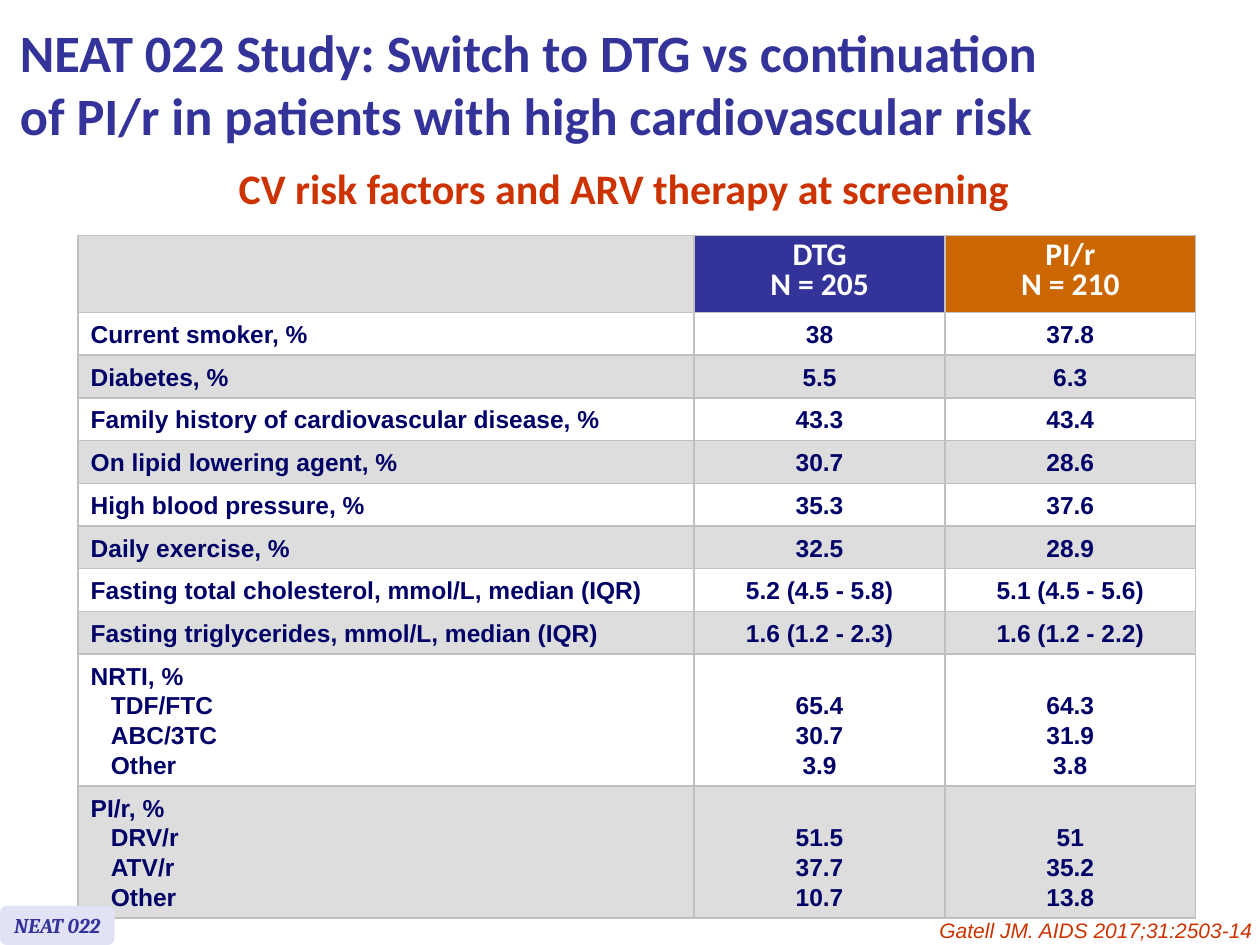
from dataclasses import dataclass

from lxml import etree
from pptx import Presentation
from pptx import util as u
from pptx.dml.color import RGBColor
from pptx.enum import shapes, text
from pptx.oxml.ns import qn

WIDE, HIGH = u.Inches(10), u.Inches(7.5)
COLS, ROWS = 100, 75  # slide grid
HUES = {
    "blue": "333399", "navy": "000066", "red": "CC3300", "orange": "CC6600",
    "gray": "DDDDDD", "line": "C0C0C0", "lilac": "E2E2F6", "white": "FFFFFF",
}
LEFT, MID, RIGHT = text.PP_ALIGN.LEFT, text.PP_ALIGN.CENTER, text.PP_ALIGN.RIGHT
LEAD = u.Pt(17)
INDENT = 1.6


@dataclass(frozen=True)
class Box:
    """A place on the slide, in grid columns and rows."""
    left: float
    top: float
    wide: float
    high: float


@dataclass(frozen=True)
class Font:
    size: int
    face: str
    hue: str
    bold: bool = True
    slant: bool = False


@dataclass(frozen=True)
class Label:
    box: Box
    font: Font
    lines: tuple
    align: int = LEFT
    lead: float = 0


@dataclass(frozen=True)
class Group:
    """A table row; a group with drugs lists them under its name."""
    name: str
    dtg: tuple
    pir: tuple
    drugs: tuple = ()


HEAD = Font(18, "Calibri", "white")
BODY = Font(14, "Arial", "navy")
ARMS = (("DTG", "N = 205", "blue"), ("PI/r", "N = 210", "orange"))
GROUPS = (
    Group("Current smoker, %", ("38",), ("37.8",)),
    Group("Diabetes, %", ("5.5",), ("6.3",)),
    Group("Family history of cardiovascular disease, %", ("43.3",), ("43.4",)),
    Group("On lipid lowering agent, %", ("30.7",), ("28.6",)),
    Group("High blood pressure, %", ("35.3",), ("37.6",)),
    Group("Daily exercise, %", ("32.5",), ("28.9",)),
    Group("Fasting total cholesterol, mmol/L, median (IQR)",
          ("5.2 (4.5 - 5.8)",), ("5.1 (4.5 - 5.6)",)),
    Group("Fasting triglycerides, mmol/L, median (IQR)",
          ("1.6 (1.2 - 2.3)",), ("1.6 (1.2 - 2.2)",)),
    Group("NRTI, %", ("65.4", "30.7", "3.9"), ("64.3", "31.9", "3.8"),
          ("TDF/FTC", "ABC/3TC", "Other")),
    Group("PI/r, %", ("51.5", "37.7", "10.7"), ("51", "35.2", "13.8"),
          ("DRV/r", "ATV/r", "Other")),
)
TABLE = Box(6.2, 18.7, 88.7, 54.1)
WIDTHS = (48.9, 19.9, 19.9)
TOP_ROW, ROW, TALL_ROW = 6.1, 3.39, 10.47

TITLE = Label(
    Box(0.6, 0.5, 98.7, 12.1), Font(30, "Calibri", "blue"),
    ("NEAT 022 Study: Switch to DTG vs continuation",
     "of PI/r in patients with high cardiovascular risk"))
TOPIC = Label(
    Box(8.4, 14.3, 82.2, 3.5), Font(24, "Calibri", "red"),
    ("CV risk factors and ARV therapy at screening",), MID, 15.2)
SOURCE = Label(
    Box(65.4, 72.3, 35, 3), Font(12, "Arial", "red", False, True),
    ("Gatell JM. AIDS 2017;31:2503-14",), RIGHT)
BADGE = Label(
    Box(0, 71.9, 9.1, 3.1), Font(12, "Cambria", "blue", True, True),
    ("NEAT 022",), MID)


def across(cols: float) -> int:
    return round(WIDE * cols / COLS)


def down(rows: float) -> int:
    return round(HIGH * rows / ROWS)


def place(box: Box) -> tuple:
    return across(box.left), down(box.top), across(box.wide), down(box.high)


def paint(fill, hue: str) -> None:
    fill.solid()
    fill.fore_color.rgb = RGBColor.from_string(HUES[hue])


def add_run(para, words: str, font: Font) -> None:
    run = para.add_run()
    run.text = words
    run.font.size, run.font.name = u.Pt(font.size), font.face
    run.font.bold, run.font.italic = font.bold, font.slant
    run.font.color.rgb = RGBColor.from_string(HUES[font.hue])


def add_text(frame, label: Label) -> None:
    """Write the label's lines as one paragraph with line breaks."""
    frame.vertical_anchor = text.MSO_ANCHOR.TOP
    para = frame.paragraphs[0]
    para.alignment = label.align
    if label.lead:
        para.line_spacing = u.Pt(label.lead)
    for num, line in enumerate(label.lines):
        if num:
            para.add_line_break()
        add_run(para, line, label.font)


def add_label(slide, label: Label):
    frame = slide.shapes.add_textbox(*place(label.box)).text_frame
    frame.word_wrap = True
    add_text(frame, label)
    return frame


def add_badge(slide, label: Label) -> None:
    shape = slide.shapes.add_shape(
        shapes.MSO_SHAPE.ROUNDED_RECTANGLE, *place(label.box))
    shape.shadow.inherit = False
    shape.adjustments[0] = 0.17
    paint(shape.fill, "lilac")
    shape.line.fill.background()
    add_text(shape.text_frame, label)
    shape.text_frame.word_wrap = False
    shape.text_frame.vertical_anchor = text.MSO_ANCHOR.MIDDLE


def edge(cell) -> None:
    """Draw a thin line on all four sides of a cell."""
    props = cell._tc.get_or_add_tcPr()
    for side in ("lnL", "lnR", "lnT", "lnB"):
        line = etree.SubElement(props, qn(f"a:{side}"), w=str(u.Pt(1)))
        fill = etree.SubElement(line, qn("a:solidFill"))
        etree.SubElement(fill, qn("a:srgbClr"), val=HUES["line"])


def fill_cell(cell, hue: str, lines: tuple, font: Font, align: int) -> None:
    edge(cell)
    paint(cell.fill, hue)
    cell.vertical_anchor = text.MSO_ANCHOR.MIDDLE
    frame = cell.text_frame
    for num, line in enumerate(lines):
        para = frame.add_paragraph() if num else frame.paragraphs[0]
        para.alignment, para.line_spacing = align, LEAD
        if num and align == LEFT:
            para._p.get_or_add_pPr().set("marL", str(across(INDENT)))
        add_run(para, line, font)


def add_grid(slide) -> None:
    table = slide.shapes.add_table(
        len(GROUPS) + 1, len(WIDTHS), *place(TABLE)).table
    for col, wide in zip(table.columns, WIDTHS):
        col.width = across(wide)
    table.rows[0].height = down(TOP_ROW)
    fill_cell(table.cell(0, 0), "gray", (), HEAD, LEFT)
    for col, (name, count, hue) in enumerate(ARMS, 1):
        fill_cell(table.cell(0, col), hue, (name, count), HEAD, MID)
    for row, group in enumerate(GROUPS, 1):
        table.rows[row].height = down(TALL_ROW if group.drugs else ROW)
        hue = "white" if row % 2 else "gray"
        names = (group.name, *group.drugs)
        fill_cell(table.cell(row, 0), hue, names, BODY, LEFT)
        for col, values in enumerate((group.dtg, group.pir), 1):
            cell = table.cell(row, col)
            fill_cell(cell, hue, values, BODY, MID)
            if group.drugs:
                cell.vertical_anchor = text.MSO_ANCHOR.BOTTOM


def main() -> None:
    deck = Presentation()
    deck.slide_width, deck.slide_height = WIDE, HIGH
    slide = deck.slides.add_slide(deck.slide_layouts[6])
    add_grid(slide)
    add_label(slide, TOPIC)
    add_badge(slide, BADGE)
    add_label(slide, TITLE).vertical_anchor = text.MSO_ANCHOR.MIDDLE
    add_label(slide, SOURCE)
    deck.save("out.pptx")


if __name__ == "__main__":
    main()
